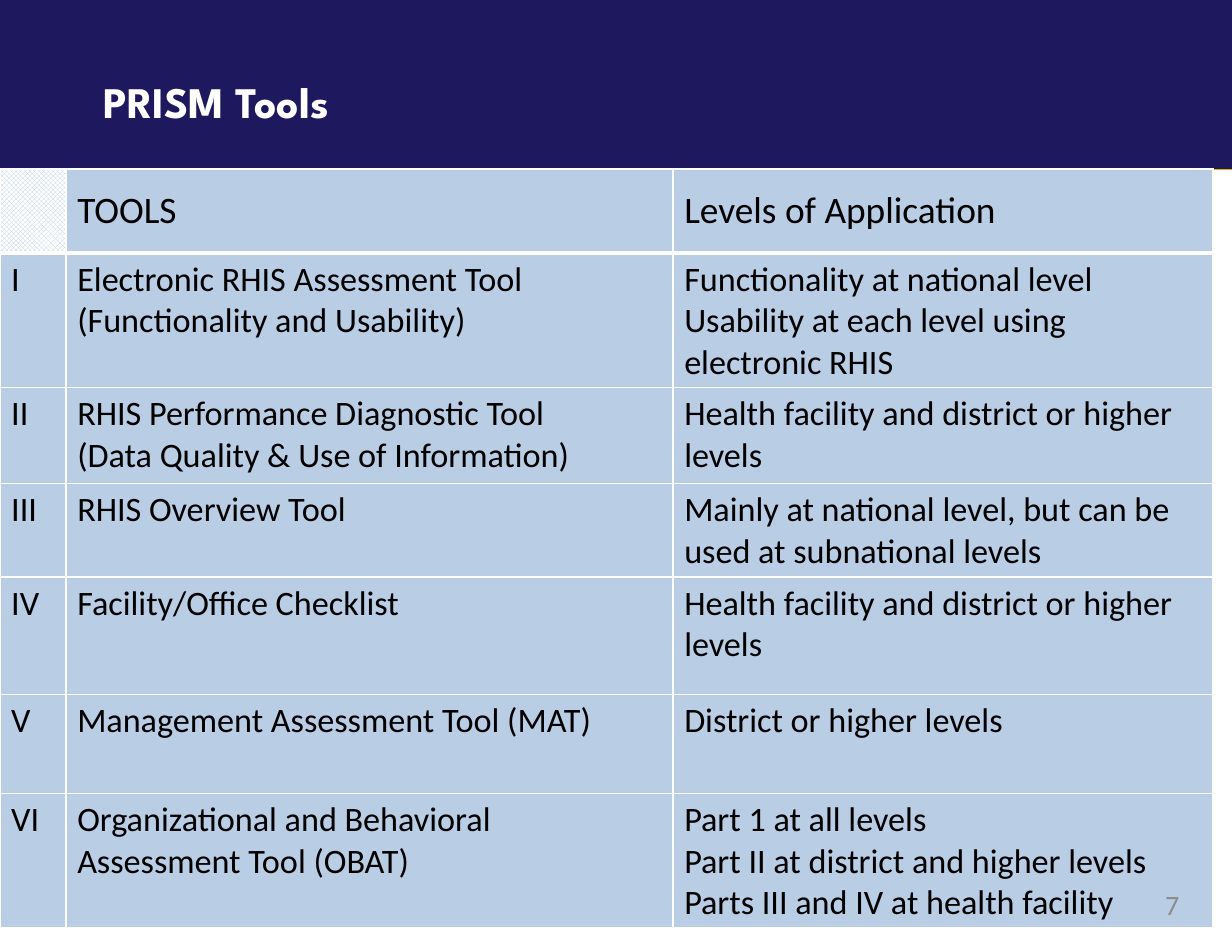
from lxml import etree
from pptx import Presentation
from pptx import util as u
from pptx.dml.color import RGBColor
from pptx.enum import dml, shapes, text
from pptx.oxml import ns
from pptx.util import Inches

COLORS = {
    "navy": "1E185F",
    "gold": "ECCE18",
    "cell": "B9CDE5",
    "white": "FFFFFF",
    "black": "000000",
    "gray": "8C8C8C",
}
COLUMN_WIDTHS = [0.59, 5.42, 4.82]
ROW_HEIGHTS = [0.75, 0.75, 0.86, 0.71, 1.05, 0.88, 0.88]
ROWS = [
    ("", "TOOLS", "Levels of Application"),
    ("I", "Electronic RHIS Assessment Tool\n(Functionality and Usability)",
     "Functionality at national level\nUsability at each level using electronic RHIS"),
    ("II", "RHIS Performance Diagnostic Tool\n(Data Quality & Use of Information)",
     "Health facility and district or higher levels"),
    ("III", "RHIS Overview Tool",
     "Mainly at national level, but can be used at subnational levels"),
    ("IV", "Facility/Office Checklist", "Health facility and district or higher levels"),
    ("V", "Management Assessment Tool (MAT)", "District or higher levels"),
    ("VI", "Organizational and Behavioral Assessment Tool (OBAT)",
     "Part 1 at all levels\nPart II at district and higher levels\n"
     "Parts III and IV at health facility"),
]


def color(name):
    return RGBColor.from_string(COLORS[name])


def write(frame, words, size, font="Calibri", ink="black", bold=False,
          align=text.PP_ALIGN.LEFT):
    """Fill a text frame, one paragraph for each line of words."""
    for index, line in enumerate(words.split("\n")):
        para = frame.add_paragraph() if index else frame.paragraphs[0]
        para.alignment = align
        span = para.add_run()
        span.text = line
        span.font.size = u.Pt(size)
        span.font.name = font
        span.font.bold = bold
        span.font.color.rgb = color(ink)


def plain_frame(box):
    """Prepare a text frame without margins, anchored at the top."""
    frame = box.text_frame
    frame.word_wrap = True
    frame.auto_size = text.MSO_AUTO_SIZE.SHAPE_TO_FIT_TEXT
    frame.vertical_anchor = text.MSO_ANCHOR.TOP
    frame.margin_left = frame.margin_right = 0
    frame.margin_top = frame.margin_bottom = 0
    return frame


def set_borders(cell, bottom):
    """Draw white cell borders, with the bottom width in points."""
    properties = cell._tc.get_or_add_tcPr()
    for index, (side, width) in enumerate(
            [("L", 1), ("R", 1), ("T", 1), ("B", bottom)]):
        line = etree.Element(ns.qn(f"a:ln{side}"), w=str(u.Pt(width)))
        fill = etree.SubElement(line, ns.qn("a:solidFill"))
        etree.SubElement(fill, ns.qn("a:srgbClr"), val=COLORS["white"])
        properties.insert(index, line)


def add_header(page, left, top, width, height):
    # Navy band over a gold one that shows as a thin edge
    for name, offset in (("gold", 0), ("navy", -0.01)):
        band = page.shapes.add_shape(
            shapes.MSO_SHAPE.RECTANGLE, Inches(left), Inches(top + offset),
            Inches(width), Inches(height))
        band.shadow.inherit = False
        band.fill.solid()
        band.fill.fore_color.rgb = color(name)
        band.line.fill.background()

    # Title, brought in front of the bands
    title = page.shapes.title
    title.left, title.top = Inches(left + 0.92), Inches(top + 0.67)
    title.width, title.height = Inches(3.27), Inches(0.47)
    write(plain_frame(title), "PRISM Tools", 28, font="League Spartan",
          ink="white", bold=True)
    title.element.getparent().append(title.element)


def add_tools_table(page, left, top, width, height):
    table = page.shapes.add_table(
        len(ROWS), len(COLUMN_WIDTHS), Inches(left), Inches(top),
        Inches(width), Inches(height)).table
    table.horz_banding = False
    for column, column_width in zip(table.columns, COLUMN_WIDTHS):
        column.width = Inches(column_width)
    for row, row_height in zip(table.rows, ROW_HEIGHTS):
        row.height = Inches(row_height)

    for row_index, row_words in enumerate(ROWS):
        heading = row_index == 0
        for column_index, words in enumerate(row_words):
            cell = table.cell(row_index, column_index)
            if words:
                cell.fill.solid()
                write(cell.text_frame, words, 24 if heading else 22)
            else:
                cell.fill.patterned()
                cell.fill.pattern = dml.MSO_PATTERN.TRELLIS
                cell.fill.back_color.rgb = color("white")
            cell.fill.fore_color.rgb = color("cell")
            if heading:
                cell.vertical_anchor = text.MSO_ANCHOR.MIDDLE
            set_borders(cell, bottom=3 if heading else 1)


def add_page_number(page, left, top, width, height):
    box = page.shapes.add_textbox(
        Inches(left), Inches(top), Inches(width), Inches(height))
    write(plain_frame(box), "7", 18, ink="gray", align=text.PP_ALIGN.RIGHT)


def main():
    deck = Presentation()
    deck.slide_width, deck.slide_height = Inches(11), Inches(8.5)
    page = deck.slides.add_slide(deck.slide_layouts[5])
    add_header(page, 0, 0, 11, 1.52)
    add_tools_table(page, 0, 1.51, sum(COLUMN_WIDTHS), sum(ROW_HEIGHTS))
    add_page_number(page, 8, 7.92, 2.53, 0.42)
    deck.save("out.pptx")


if __name__ == "__main__":
    main()
